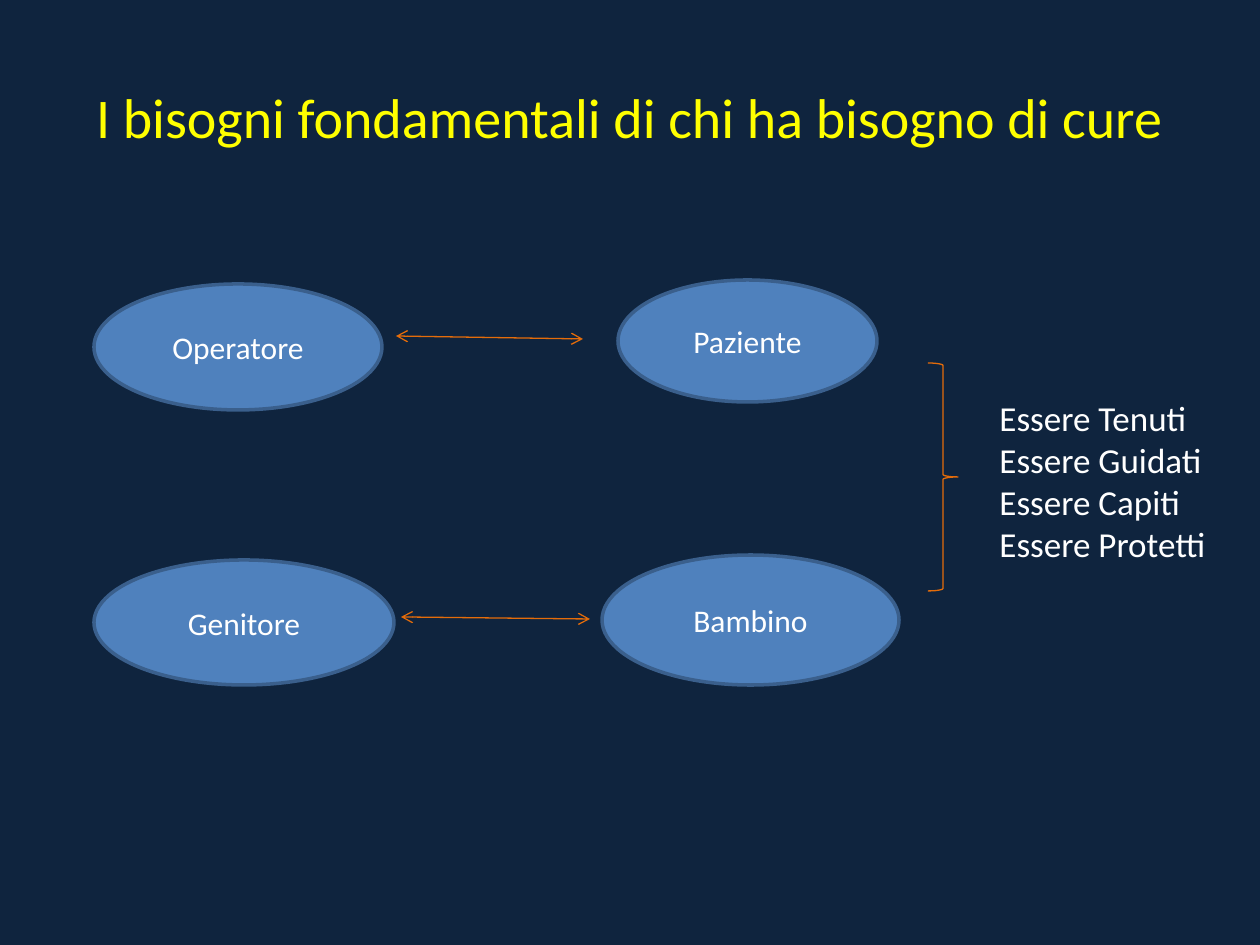
from pptx import Presentation
from pptx.dml.color import RGBColor
from pptx.enum.shapes import MSO_CONNECTOR, MSO_SHAPE
from pptx.enum.text import MSO_ANCHOR, PP_ALIGN
from pptx.oxml.ns import qn
from pptx.util import Emu, Pt
from lxml.etree import SubElement

NAVY = RGBColor(0x0F, 0x24, 0x3E)
BLUE = RGBColor(0x4F, 0x81, 0xBD)
DARK_BLUE = RGBColor(0x3A, 0x5F, 0x8C)
ORANGE = RGBColor(0xE4, 0x6C, 0x0A)
YELLOW = RGBColor(0xFF, 0xFF, 0x00)
WHITE = RGBColor(0xFF, 0xFF, 0xFF)

TITLE = {"name": "Calibri", "size": Pt(32)}
LABEL = {"name": "Calibri", "size": Pt(18)}
NEED = {"name": "Calibri", "size": Pt(20)}

ROLES = [
    ("Operatore", (94, 284, 288, 126)),
    ("Paziente", (618, 280, 259, 122)),
    ("Genitore", (94, 560, 300, 125)),
    ("Bambino", (602, 555, 297, 130)),
]
LINKS = [(396, 336, 583, 339), (401, 617, 590, 619)]
NEEDS = ["Essere Tenuti", "Essere Guidati", "Essere Capiti", "Essere Protetti"]


def px(*values):
    """Turn pixel lengths into EMU."""
    return [Emu(round(v * 914400 / 126)) for v in values]


def write(sp, lines, fmt, color, align, anchor):
    """Fill a shape with one formatted paragraph per line."""
    tf = sp.text_frame
    tf.word_wrap = True
    tf.vertical_anchor = anchor
    for i, line in enumerate(lines):
        p = tf.paragraphs[0] if i == 0 else tf.add_paragraph()
        p.alignment = align
        r = p.add_run()
        r.text = line
        for key, value in fmt.items():
            setattr(r.font, key, value)
        r.font.color.rgb = color


def stroke(sp, color, width):
    """Set the outline of a shape or connector."""
    sp.line.color.rgb = color
    sp.line.width = Pt(width)


def add_text(s, box, lines, fmt, color, align, anchor):
    """Add a text box."""
    sp = s.shapes.add_textbox(*px(*box))
    write(sp, lines, fmt, color, align, anchor)


def add_role(s, name, box):
    """Add a labelled ellipse."""
    sp = s.shapes.add_shape(MSO_SHAPE.OVAL, *px(*box))
    sp.shadow.inherit = False
    sp.fill.solid()
    sp.fill.fore_color.rgb = BLUE
    stroke(sp, DARK_BLUE, 2)
    write(sp, [name], LABEL, WHITE, PP_ALIGN.CENTER, MSO_ANCHOR.MIDDLE)


def add_link(s, ends):
    """Add a double-headed arrow."""
    sp = s.shapes.add_connector(MSO_CONNECTOR.STRAIGHT, *px(*ends))
    stroke(sp, ORANGE, 0.75)
    ln = sp.line._get_or_add_ln()
    for tag in ("a:headEnd", "a:tailEnd"):
        SubElement(ln, qn(tag), type="arrow")
    SubElement(sp._element.spPr, qn("a:effectLst"))


def add_brace(s, box):
    """Add an unfilled right brace."""
    sp = s.shapes.add_shape(MSO_SHAPE.RIGHT_BRACE, *px(*box))
    sp.shadow.inherit = False
    sp.fill.background()
    stroke(sp, ORANGE, 0.75)


def main():
    """Build and save the slide."""
    prs = Presentation()
    prs.slide_width, prs.slide_height = px(1260, 945)
    s = prs.slides.add_slide(prs.slide_layouts[6])
    s.background.fill.solid()
    s.background.fill.fore_color.rgb = NAVY
    add_text(s, (63, 38, 1134, 157), ["I bisogni fondamentali di chi ha bisogno di cure"],
             TITLE, YELLOW, PP_ALIGN.CENTER, MSO_ANCHOR.MIDDLE)
    for name, box in ROLES:
        add_role(s, name, box)
    for ends in LINKS:
        add_link(s, ends)
    add_brace(s, (928, 363, 30, 228))
    add_text(s, (987, 390, 248, 183), NEEDS, NEED, WHITE, PP_ALIGN.LEFT, MSO_ANCHOR.TOP)
    prs.save("out.pptx")


if __name__ == "__main__":
    main()
